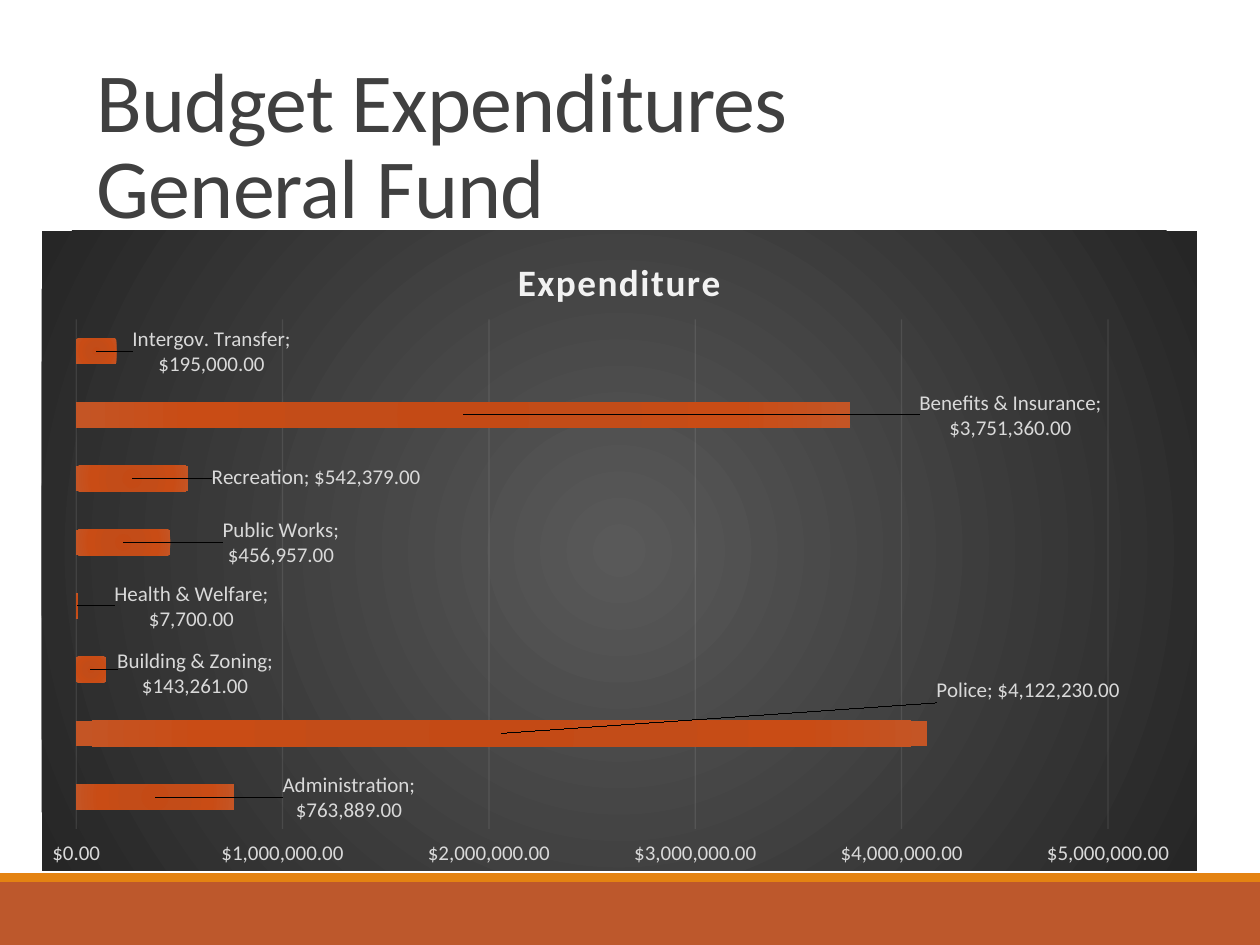
from copy import deepcopy

from lxml import etree
from pptx import Presentation
from pptx.chart.data import CategoryChartData
from pptx.dml.color import RGBColor
from pptx.enum.chart import XL_CHART_TYPE, XL_LABEL_POSITION, XL_TICK_LABEL_POSITION, XL_TICK_MARK
from pptx.enum.shapes import MSO_SHAPE
from pptx.enum.text import MSO_ANCHOR
from pptx.oxml import parse_xml
from pptx.oxml.ns import nsdecls, qn
from pptx.util import Inches, Pt

BAR_STACKED = XL_CHART_TYPE.BAR_STACKED
CENTER = XL_LABEL_POSITION.CENTER
LOW = XL_TICK_LABEL_POSITION.LOW
NO_TICK = XL_TICK_MARK.NONE
RECT = MSO_SHAPE.RECTANGLE
BOTTOM = MSO_ANCHOR.BOTTOM

FONT = "Calibri"
MONEY = '"$"#,##0.00'
TITLE = ["Budget Expenditures", "General Fund"]
CHART_TITLE = "Expenditure"
# category, amount, centre of its label on the slide
EXPENDITURES = [
    ("Administration", 763889, (2.77, 6.33)),
    ("Police", 4122230, (8.16, 5.48)),
    ("Building & Zoning", 143261, (1.55, 5.35)),
    ("Health & Welfare", 7700, (1.52, 4.82)),
    ("Public Works", 456957, (2.23, 4.31)),
    ("Recreation", 542379, (2.51, 3.79)),
    ("Benefits & Insurance", 3751360, (8.02, 3.30)),
    ("Intergov. Transfer", 195000, (1.68, 2.79)),
]
AXIS_MAX, AXIS_STEP = 5000000, 1000000
CHART_BOX = (0.33, 1.83, 9.17, 5.08)
PLOT = (0.03, 0.139, 0.893, 0.796)  # fractions of the chart
BANDS = [(7, 0.5, "BD582C"), (6.93, 0.07, "E48312")]  # top, height, colour
BACK_STOPS = [(0, "595959"), (100, "262626")]
BAR_STOPS = [(0, "C44A15"), (34, "C34C18"), (70, "C94C15"), (100, "C45525")]


def rgb(value):
    return RGBColor.from_string(value)


def set_font(font, size, color, bold=False):
    font.name, font.size, font.bold = FONT, Pt(size), bold
    font.color.rgb = rgb(color)


def radial_fill(stops, focus):
    """Circular gradient; focus is the left and top, right and bottom inset in percent."""
    gs = "".join(f'<a:gs pos="{pos * 1000}"><a:srgbClr val="{c}"/></a:gs>' for pos, c in stops)
    sides = " ".join(f'{side}="{focus * 1000}"' for side in "ltrb")
    return parse_xml(f'<a:gradFill {nsdecls("a")} rotWithShape="1"><a:gsLst>{gs}</a:gsLst>'
                     f'<a:path path="circle"><a:fillToRect {sides}/></a:path></a:gradFill>')


def manual_layout(x, y, w=None, h=None):
    parts = []
    if w is not None:
        parts = [("layoutTarget", "inner"), ("xMode", "edge"), ("yMode", "edge")]
    parts += [("x", x), ("y", y)]
    if w is not None:
        parts += [("w", w), ("h", h)]
    body = "".join(f'<c:{tag} val="{val}"/>' for tag, val in parts)
    return parse_xml(f'<c:layout {nsdecls("c")}><c:manualLayout>{body}</c:manualLayout></c:layout>')


prs = Presentation()
prs.slide_width, prs.slide_height = Inches(10), Inches(7.5)
s = prs.slides.add_slide(prs.slide_layouts[6])

# Footer bands
for top, height, color in BANDS:
    sp = s.shapes.add_shape(RECT, 0, Inches(top), prs.slide_width, Inches(height))
    sp.shadow.inherit = False
    sp.fill.solid()
    sp.fill.fore_color.rgb = rgb(color)
    sp.line.fill.background()

# Title
tf = s.shapes.add_textbox(*map(Inches, (0.67, 0.17, 9.17, 1.75))).text_frame
tf.word_wrap = True
tf.vertical_anchor = BOTTOM
p = tf.paragraphs[0]
p.line_spacing = 0.85
for i, text in enumerate(TITLE):
    if i:
        p.add_line_break()
    r = p.add_run()
    r.text = text
    set_font(r.font, 48, "404040")
    r.font._element.set("spc", "-50")

# Chart
data = CategoryChartData(number_format=MONEY)
data.categories = [name for name, _, _ in EXPENDITURES]
data.add_series(CHART_TITLE, [amount for _, amount, _ in EXPENDITURES])
chart = s.shapes.add_chart(BAR_STACKED, *map(Inches, CHART_BOX), data).chart
set_font(chart.font, 10, "000000")
chart.has_legend = False
chart.has_title = True
p = chart.chart_title.text_frame.paragraphs[0]
r = p.add_run()
r.text = CHART_TITLE
set_font(r.font, 21.3, "F2F2F2", bold=True)
r.font._element.set("spc", "100")
chart.chart_title.include_in_layout = False

# Chart background and plot position
root = chart.element
back = parse_xml(f'<c:spPr {nsdecls("c", "a")}><a:ln><a:noFill/></a:ln></c:spPr>')
back.insert(0, radial_fill(BACK_STOPS, 50))
root.find(qn("c:chart")).addnext(back)
area = root.find(".//" + qn("c:plotArea"))
for old in area.findall(qn("c:layout")):
    area.remove(old)
area.insert(0, manual_layout(*PLOT))

# Axes
chart.category_axis.visible = False
axis = chart.value_axis
axis.minimum_scale, axis.maximum_scale, axis.major_unit = 0, AXIS_MAX, AXIS_STEP
axis.major_tick_mark = axis.minor_tick_mark = NO_TICK
axis.tick_label_position = LOW
axis.tick_labels.number_format = MONEY
axis.tick_labels.number_format_is_linked = False
set_font(axis.tick_labels.font, 12, "D9D9D9")
axis.format.line.fill.background()
grid = axis.major_gridlines.format.line
grid.width = Pt(0.75)
grid.color.rgb = rgb("F2F2F2")
grid_color = axis.major_gridlines.format.line._ln.find(".//" + qn("a:srgbClr"))
etree.SubElement(grid_color, qn("a:alpha"), val="10000")

# Bars
plot = chart.plots[0]
plot.gap_width, plot.overlap, plot.vary_by_categories = 150, 100, False
ser = plot.series[0]
ser.format.fill.background()
ser_props = root.find(".//" + qn("c:ser")).find(qn("c:spPr"))
ser_props.replace(ser_props.find(qn("a:noFill")), radial_fill(BAR_STOPS, 100))

# Labels, each moved from the middle of its bar
labels = ser.data_labels
labels.show_value = labels.show_category_name = True
labels.number_format, labels.number_format_is_linked = MONEY, False
labels.position = CENTER
set_font(labels.font, 12, "D9D9D9")
d_lbls = root.find(".//" + qn("c:ser")).find(qn("c:dLbls"))
separator = parse_xml(f'<c:separator {nsdecls("c")}>; </c:separator>')
d_lbls.find(qn("c:showBubbleSize")).addnext(separator)
shared = [el for el in d_lbls if el.tag != qn("c:showLeaderLines")]
left, top, width, height = CHART_BOX
px, py, pw, ph = PLOT
for i, (_, amount, (x, y)) in enumerate(EXPENDITURES):
    bar_x = px + pw * amount / AXIS_MAX / 2
    bar_y = py + ph * (1 - (i + 0.5) / len(EXPENDITURES))
    label = parse_xml(f'<c:dLbl {nsdecls("c")}><c:idx val="{i}"/></c:dLbl>')
    label.append(manual_layout(round((x - left) / width - bar_x, 4),
                               round((y - top) / height - bar_y, 4)))
    label.extend(deepcopy(el) for el in shared)
    d_lbls.insert(i, label)

prs.save("out.pptx")
